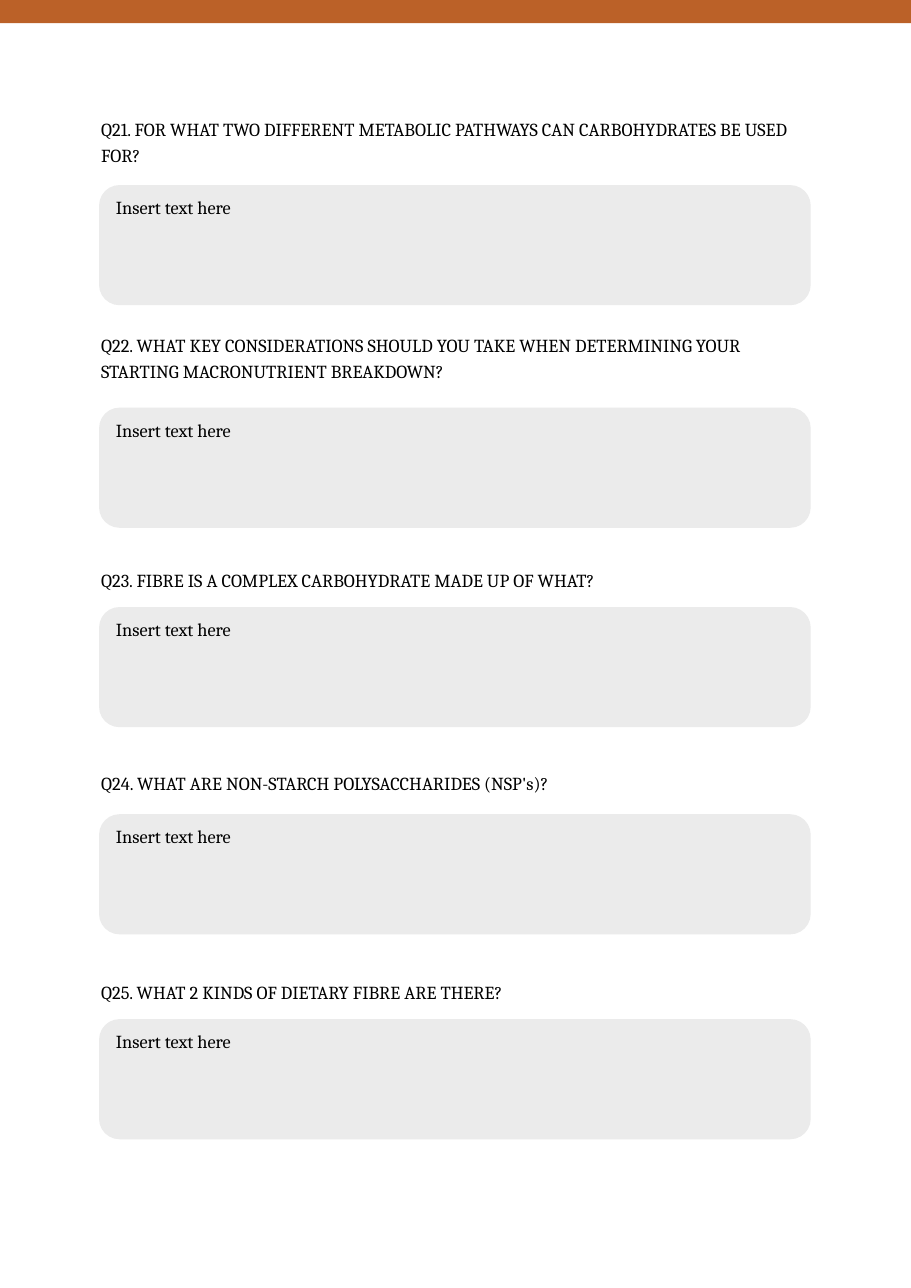
from pptx import Presentation
from pptx.dml.color import RGBColor
from pptx.enum.shapes import MSO_SHAPE as Shape
from pptx.enum.text import MSO_ANCHOR as Anchor, PP_ALIGN as Align
from pptx.util import Inches, Pt

PAGE_WIDTH, PAGE_HEIGHT = 8.27, 11.69
COLUMN_WIDTH = 6.46
ORANGE, GREY, BLACK = "BB6128", "EBEBEB", "000000"

# Question, its top and height, and the top of its answer box
QUESTIONS = [
    ("Q21. FOR WHAT TWO DIFFERENT METABOLIC PATHWAYS CAN CARBOHYDRATES BE USED FOR?",
     0.98, 0.59, 1.68),
    ("Q22. WHAT KEY CONSIDERATIONS SHOULD YOU TAKE WHEN DETERMINING YOUR "
     "STARTING MACRONUTRIENT BREAKDOWN?", 2.94, 0.59, 3.7),
    ("Q23. FIBRE IS A COMPLEX CARBOHYDRATE MADE UP OF WHAT?", 5.08, 0.34, 5.51),
    ("Q24. WHAT ARE NON-STARCH POLYSACCHARIDES (NSP's)?", 6.92, 0.34, 7.39),
    ("Q25. WHAT 2 KINDS OF DIETARY FIBRE ARE THERE?", 8.82, 0.34, 9.25),
]


def color(hex_value):
    return RGBColor.from_string(hex_value)


def write(frame, text, line_spacing=1.0):
    frame.word_wrap = True
    frame.vertical_anchor = Anchor.TOP
    paragraph = frame.paragraphs[0]
    paragraph.alignment = Align.LEFT
    paragraph.line_spacing = line_spacing
    run = paragraph.add_run()
    run.text = text
    run.font.name = "Cambria"
    run.font.size = Pt(12)
    run.font.color.rgb = color(BLACK)


def add_block(slide, kind, left, top, width, height, fill):
    block = slide.shapes.add_shape(
        kind, Inches(left), Inches(top), Inches(width), Inches(height))
    block.shadow.inherit = False
    block.fill.solid()
    block.fill.fore_color.rgb = color(fill)
    block.line.fill.background()
    return block


def add_question(slide, text, top, height):
    question = slide.shapes.add_textbox(
        Inches(0.82), Inches(top), Inches(COLUMN_WIDTH), Inches(height))
    write(question.text_frame, text, line_spacing=1.2)


def add_answer(slide, top):
    answer = add_block(slide, Shape.ROUNDED_RECTANGLE, 0.9, top, COLUMN_WIDTH, 1.09, GREY)
    answer.adjustments[0] = 0.17
    write(answer.text_frame, "Insert text here")


def main():
    deck = Presentation()
    deck.slide_width = Inches(PAGE_WIDTH)
    deck.slide_height = Inches(PAGE_HEIGHT)
    slide = deck.slides.add_slide(deck.slide_layouts[6])

    # Band across the top of the page
    add_block(slide, Shape.RECTANGLE, 0, 0, PAGE_WIDTH, 0.21, ORANGE)

    # Questions, each with its answer box
    for text, top, height, answer_top in QUESTIONS:
        add_question(slide, text, top, height)
        add_answer(slide, answer_top)

    deck.save("out.pptx")


if __name__ == "__main__":
    main()
